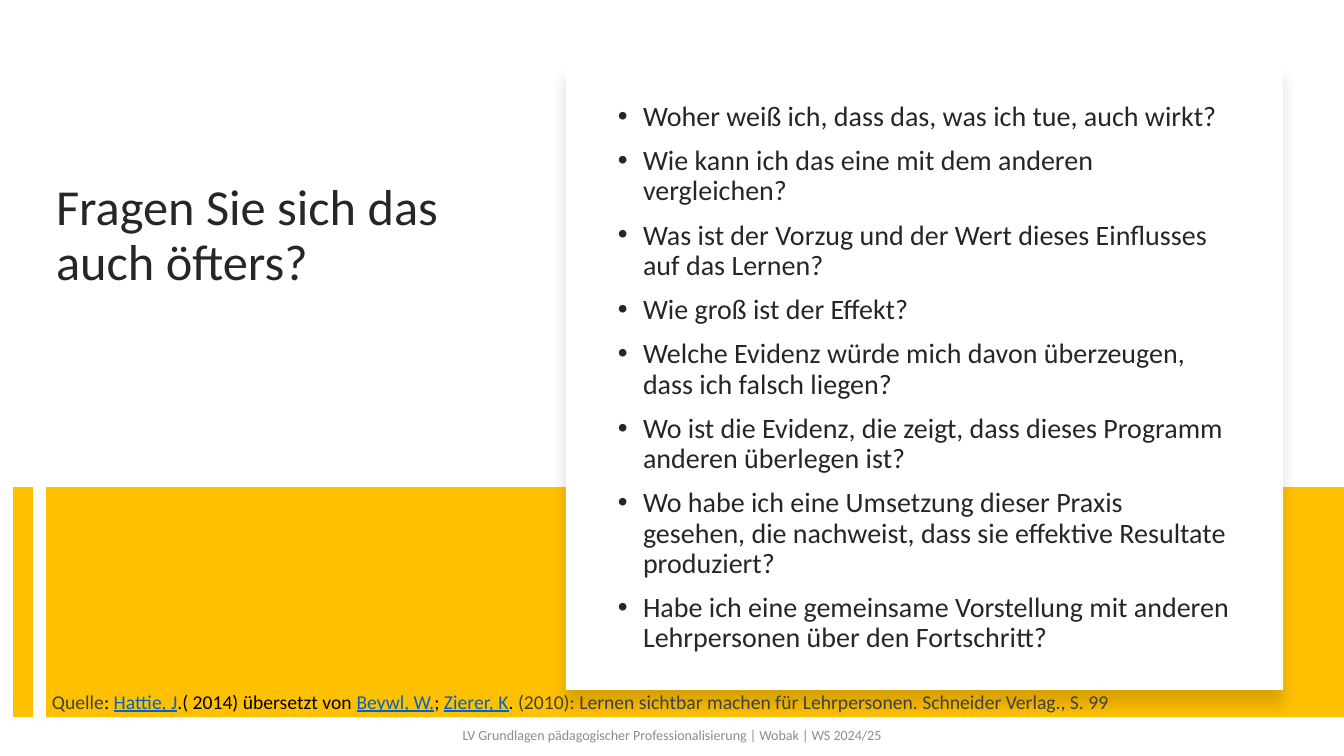
from lxml import etree
from pptx import Presentation
from pptx import util as u
from pptx.dml.color import RGBColor
from pptx.enum import shapes, text
from pptx.oxml import parse_xml
from pptx.oxml.ns import nsdecls, qn

PX = 9525
AMBER, WHITE, BLACK = "FFC000", "FFFFFF", "000000"
INK, GREY, PALE, LINK = "262626", "404040", "8C8C8C", "0563C1"

QUESTIONS = [
    "Woher weiß ich, dass das, was ich tue, auch wirkt?",
    "Wie kann ich das eine mit dem anderen vergleichen?",
    "Was ist der Vorzug und der Wert dieses Einflusses auf das Lernen?",
    "Wie groß ist der Effekt?",
    "Welche Evidenz würde mich davon überzeugen, dass ich falsch liegen?",
    "Wo ist die Evidenz, die zeigt, dass dieses Programm anderen überlegen ist?",
    "Wo habe ich eine Umsetzung dieser Praxis gesehen, die nachweist, "
    "dass sie effektive Resultate produziert?",
    "Habe ich eine gemeinsame Vorstellung mit anderen Lehrpersonen über den Fortschritt?",
]

SOURCE = [
    ("Quelle", GREY),
    (": ", BLACK),
    ("Hattie, J", LINK),
    (".( 2014) übersetzt von ", BLACK),
    ("Beywl, W.", LINK),
    ("; ", BLACK),
    ("Zierer, K", LINK),
    (". ", BLACK),
    ("(2010): Lernen sichtbar machen für Lehrpersonen. Schneider Verlag., S. 99", GREY),
]


def px(*values):
    return [u.Emu(v * PX) for v in values]


def rgb(value):
    return RGBColor.from_string(value)


def set_all(target, values):
    for name, value in values.items():
        setattr(target, name, value)


def add_rect(s, box, color):
    sp = s.shapes.add_shape(shapes.MSO_SHAPE.RECTANGLE, *px(*box))
    sp.shadow.inherit = False
    sp.fill.solid()
    sp.fill.fore_color.rgb = rgb(color)
    sp.line.fill.background()
    return sp


def add_soft_shadow(sp):
    effects = sp._element.spPr.find(qn("a:effectLst"))
    effects.append(parse_xml(
        f'<a:outerShdw {nsdecls("a")} blurRad="{u.Pt(11)}" dist="{u.Pt(10)}" '
        f'dir="5400000" algn="t" rotWithShape="0"><a:srgbClr val="{BLACK}">'
        '<a:alpha val="15000"/></a:srgbClr></a:outerShdw>'))


def add_line(s, ends, color, width):
    cx = s.shapes.add_connector(shapes.MSO_CONNECTOR.STRAIGHT, *px(*ends))
    cx.line.color.rgb = rgb(color)
    cx.line.width = u.Pt(width)
    etree.SubElement(cx._element.spPr, qn("a:effectLst"))


def add_bullet(p):
    pPr = p._p.get_or_add_pPr()
    set_all_xml = {"marL": u.Inches(0.25), "indent": -u.Inches(0.25)}
    for name, value in set_all_xml.items():
        pPr.set(name, str(value))
    etree.SubElement(pPr, qn("a:buFont")).set("typeface", "Arial")
    etree.SubElement(pPr, qn("a:buChar")).set("char", "•")


def add_text(s, box, paragraphs, size, para=None, frame=None, bullets=False):
    tf = s.shapes.add_textbox(*px(*box)).text_frame
    set_all(tf, {"word_wrap": True, **(frame or {})})
    for i, runs in enumerate(paragraphs):
        p = tf.paragraphs[0] if i == 0 else tf.add_paragraph()
        if bullets:
            add_bullet(p)
        set_all(p, para or {})
        if i == 0:
            p.space_before = u.Pt(0)
        for content, color in runs:
            r = p.add_run()
            r.text = content
            set_all(r.font, {"name": "Calibri", "size": u.Pt(size)})
            r.font.color.rgb = rgb(color)
            if color == LINK:
                r.font.underline = True


def main():
    prs = Presentation()
    prs.slide_width, prs.slide_height = px(1280, 720)
    s = prs.slides.add_slide(prs.slide_layouts[6])

    add_text(s, (44, 169, 398, 282), [[("Fragen Sie sich das auch öfters?", INK)]],
             36, {"line_spacing": 0.9})
    add_rect(s, (44, 464, 1236, 219), AMBER)
    add_line(s, (22, 464, 22, 683), AMBER, 14)
    add_soft_shadow(add_rect(s, (539, 61, 683, 596), WHITE))
    add_text(s, (579, 94, 603, 532), [[(q, INK)] for q in QUESTIONS], 20,
             {"line_spacing": 0.9, "space_before": u.Pt(10)},
             {"vertical_anchor": text.MSO_ANCHOR.MIDDLE}, bullets=True)
    add_text(s, (40, 652, 1195, 61), [SOURCE], 14,
             frame={"auto_size": text.MSO_AUTO_SIZE.SHAPE_TO_FIT_TEXT})
    add_text(s, (424, 682, 432, 38),
             [[("LV Grundlagen pädagogischer Professionalisierung | Wobak | WS 2024/25", PALE)]],
             10,
             {"alignment": text.PP_ALIGN.CENTER, "line_spacing": 0.9, "space_after": u.Pt(6)},
             {"vertical_anchor": text.MSO_ANCHOR.MIDDLE})

    prs.save("out.pptx")


if __name__ == "__main__":
    main()
